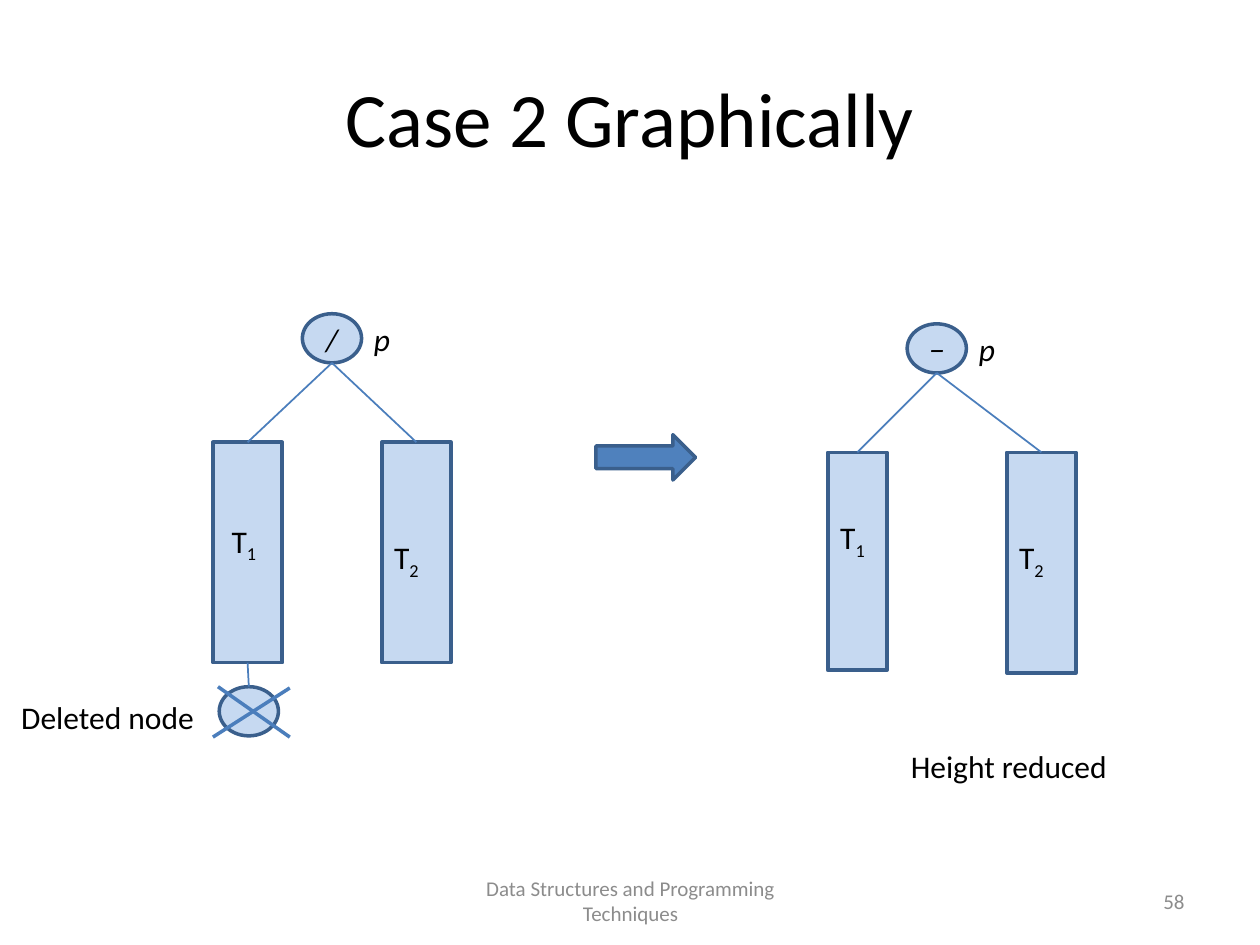
from pptx import Presentation
from pptx.dml.color import RGBColor
from pptx.enum.shapes import MSO_CONNECTOR, MSO_SHAPE
from pptx.enum.text import MSO_ANCHOR, PP_ALIGN
from pptx.oxml.ns import qn
from pptx.util import Inches, Pt

# Content: each tree has a root ellipse and two subtree rectangles
TITLE = "Case 2 Graphically"
TREES = [
    {"root": (2.4, 2.49), "balance": "/", "subtrees": [
        {"box": (1.69, 3.51, 0.55, 1.75), "index": "1", "label": (1.74, 4.09)},
        {"box": (3.03, 3.51, 0.55, 1.75), "index": "2", "label": (3.03, 4.22)}]},
    {"root": (7.2, 2.57), "balance": "−", "subtrees": [
        {"box": (6.57, 3.59, 0.47, 1.73), "index": "1", "label": (6.57, 4.06)},
        {"box": (7.99, 3.59, 0.55, 1.75), "index": "2", "label": (7.99, 4.22)}]},
]
DELETED_NODE = (1.74, 5.45)
CROSS = [((1.69, 5.85), (2.3, 5.46)), ((1.73, 5.45), (2.3, 5.85))]
ARROW = (4.73, 3.45, 0.79, 0.36)
CAPTIONS = [("Deleted node", (0.07, 5.49, 1.61, 0.4)),
            ("Height reduced", (7.13, 5.88, 1.89, 0.4))]
FOOTERS = [
    ("Data Structures and Programming Techniques", (3.42, 6.95, 3.17, 0.4), PP_ALIGN.CENTER),
    ("58", (7.17, 6.95, 2.33, 0.4), PP_ALIGN.RIGHT),
]

NODE_WIDTH, NODE_HEIGHT = 0.47, 0.39
LABEL_SIZE = (0.47, 0.4)
BLACK, GREY = "000000", "8C8C8C"
PALE, BLUE, OUTLINE, EDGE = "C6D9F1", "4F81BD", "3A5F8C", "4B7EBC"


def color(code):
    return RGBColor.from_string(code)


def add_span(para, text, size=18, code=BLACK, **formats):
    span = para.add_run()
    span.text = text
    span.font.color.rgb = color(code)
    for name, value in {"name": "Calibri", "size": Pt(size), **formats}.items():
        setattr(span.font, name, value)
    return span


def add_text(page, text, at, align=PP_ALIGN.LEFT, anchor=MSO_ANCHOR.TOP, **formats):
    box = page.shapes.add_textbox(*map(Inches, at))
    frame = box.text_frame
    frame.word_wrap = True
    frame.vertical_anchor = anchor
    para = frame.paragraphs[0]
    para.alignment = align
    add_span(para, text, **formats)
    return para


def add_shape(page, kind, at, fill=PALE):
    shape = page.shapes.add_shape(kind, *map(Inches, at))
    shape.shadow.inherit = False
    shape.fill.solid()
    shape.fill.fore_color.rgb = color(fill)
    shape.line.color.rgb = color(OUTLINE)
    shape.line.width = Pt(2)
    return shape


def add_line(page, start, end, width=1):
    line = page.shapes.add_connector(MSO_CONNECTOR.STRAIGHT, *map(Inches, (*start, *end)))
    line.line.color.rgb = color(EDGE)
    line.line.width = Pt(width)
    properties = line._element.spPr
    properties.append(properties.makeelement(qn("a:effectLst"), {}))
    return line


def add_node(page, left, top):
    return add_shape(page, MSO_SHAPE.OVAL, (left, top, NODE_WIDTH, NODE_HEIGHT))


def add_tree(page, tree):
    left, top = tree["root"]
    add_node(page, left, top)
    add_text(page, tree["balance"], (left, top, *LABEL_SIZE), PP_ALIGN.CENTER, italic=True)
    add_text(page, "p", (left + NODE_WIDTH, top, *LABEL_SIZE), italic=True)
    root_bottom = (left + NODE_WIDTH / 2, top + NODE_HEIGHT)
    blocks = []
    for subtree in tree["subtrees"]:
        block = add_shape(page, MSO_SHAPE.RECTANGLE, subtree["box"])
        add_line(page, root_bottom, subtree["box"][:2]).end_connect(block, 0)
        para = add_text(page, "T", (*subtree["label"], *LABEL_SIZE))
        index = add_span(para, subtree["index"])
        index.font._element.set("baseline", "-25000")
        blocks.append(block)
    return blocks


def main():
    deck = Presentation()
    deck.slide_width, deck.slide_height = Inches(10), Inches(7.5)
    page = deck.slides.add_slide(deck.slide_layouts[5])

    # Title
    title = page.shapes.title
    title.left, title.top, title.width, title.height = map(Inches, (0.5, 0.3, 9, 1.25))
    title.text_frame.vertical_anchor = MSO_ANCHOR.MIDDLE
    para = title.text_frame.paragraphs[0]
    para.alignment = PP_ALIGN.CENTER
    add_span(para, TITLE, size=44)

    # Trees before and after, with the arrow between them
    before, after = [add_tree(page, tree) for tree in TREES]
    add_shape(page, MSO_SHAPE.RIGHT_ARROW, ARROW, BLUE)

    # Deleted node, crossed out below the first subtree
    left, top = DELETED_NODE
    add_node(page, left, top)
    node_top = (left + NODE_WIDTH / 2, top)
    add_line(page, node_top, node_top).begin_connect(before[0], 2)
    for start, end in CROSS:
        add_line(page, start, end, width=2)

    # Captions and footer
    for text, at in CAPTIONS:
        add_text(page, text, at)
    for text, at, align in FOOTERS:
        add_text(page, text, at, align, MSO_ANCHOR.MIDDLE, size=12, code=GREY)

    deck.save("out.pptx")


if __name__ == "__main__":
    main()
